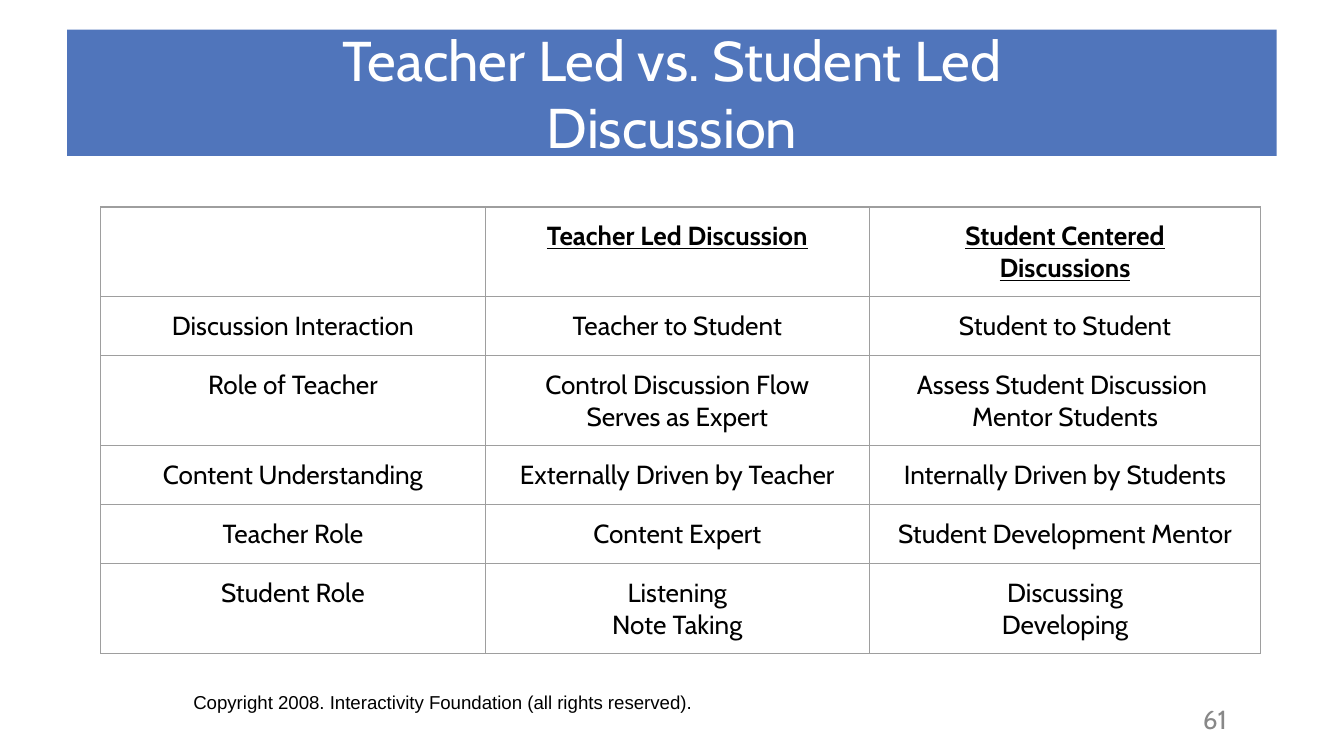
from typing import NamedTuple

from lxml.etree import SubElement
from pptx import Presentation
from pptx.dml.color import RGBColor
from pptx.enum.text import MSO_ANCHOR as Anchor, MSO_AUTO_SIZE as AutoSize, PP_ALIGN as Align
from pptx.oxml.ns import qn
from pptx.util import Inches, Pt

COLORS = {
    "banner": "5075BB",
    "title": "FFFFFF",
    "text": "000000",
    "number": "888888",
    "border": "9E9E9E",
}
SLIDE_WIDTH = Inches(10)
COLUMN_WIDTHS = (2.86, 2.86, 2.91)
ROW_HEIGHT = 0.44  # minimum; two-line rows grow to fit
PADDING = Inches(0.1)


class Comparison(NamedTuple):
    topic: str
    teacher_led: str
    student_centered: str


class Label(NamedTuple):
    text: str
    box: tuple[float, float, float, float]
    font: str
    size: float
    color: str
    align: Align
    anchor: Anchor
    vertical_inset: float


ROWS = [
    Comparison("", "Teacher Led Discussion", "Student Centered\nDiscussions"),
    Comparison("Discussion Interaction", "Teacher to Student", "Student to Student"),
    Comparison("Role of Teacher", "Control Discussion Flow\nServes as Expert",
               "Assess Student Discussion \nMentor Students"),
    Comparison("Content Understanding", "Externally Driven by Teacher",
               "Internally Driven by Students"),
    Comparison("Teacher Role", "Content Expert", "Student Development Mentor"),
    Comparison("Student Role", "Listening\nNote Taking", "Discussing\nDeveloping"),
]
PAGE_NUMBER = Label("61", (8.5, 5.2, 1.08, 0.3), "Cabin", 14, "number",
                    Align.CENTER, Anchor.MIDDLE, 0.05)
COPYRIGHT = Label("Copyright 2008. Interactivity Foundation (all rights reserved).",
                  (1.34, 5.06, 7.94, 0.34), "Arial", 10, "text",
                  Align.LEFT, Anchor.TOP, 0.1)


def format_text(text_frame, font: str, size: float, color: str, align: Align,
                heading: bool = False) -> None:
    for paragraph in text_frame.paragraphs:
        paragraph.alignment = align
        paragraph.font.size = Pt(size)
        for run in paragraph.runs:
            run.font.name = font
            run.font.size = Pt(size)
            run.font.bold = heading
            run.font.underline = heading
            run.font.color.rgb = RGBColor.from_string(COLORS[color])


def add_label(slide, label: Label) -> None:
    shape = slide.shapes.add_textbox(*map(Inches, label.box))
    text_frame = shape.text_frame
    text_frame.word_wrap = True
    text_frame.vertical_anchor = label.anchor
    text_frame.margin_left = text_frame.margin_right = PADDING
    text_frame.margin_top = text_frame.margin_bottom = Inches(label.vertical_inset)
    text_frame.text = label.text
    format_text(text_frame, label.font, label.size, label.color, label.align)


def format_title(title) -> None:
    title.left, title.top, title.width, title.height = map(Inches, (0.5, 0.22, 9, 0.94))
    title.fill.solid()
    title.fill.fore_color.rgb = RGBColor.from_string(COLORS["banner"])
    text_frame = title.text_frame
    text_frame.auto_size = AutoSize.NONE
    text_frame.vertical_anchor = Anchor.MIDDLE
    text_frame.text = "Teacher Led vs. Student Led\nDiscussion"
    format_text(text_frame, "Cabin", 30, "title", Align.CENTER)


def set_borders(cell) -> None:
    properties = cell._tc.get_or_add_tcPr()
    for side in ("a:lnL", "a:lnR", "a:lnT", "a:lnB"):
        line = SubElement(properties, qn(side), w=str(Pt(0.75)))
        fill = SubElement(line, qn("a:solidFill"))
        SubElement(fill, qn("a:srgbClr"), val=COLORS["border"])


def add_comparison_table(slide) -> None:
    shape = slide.shapes.add_table(len(ROWS), len(COLUMN_WIDTHS), Inches(0.75),
                                   Inches(1.54), Inches(8.62), Inches(3.3))
    table = shape.table
    table.first_row = table.horz_banding = False
    for column, width in zip(table.columns, COLUMN_WIDTHS):
        column.width = Inches(width)
    for row_index, (row, comparison) in enumerate(zip(table.rows, ROWS)):
        row.height = Inches(ROW_HEIGHT)
        for cell, text in zip(row.cells, comparison):
            cell.margin_left = cell.margin_right = PADDING
            cell.margin_top = cell.margin_bottom = PADDING
            cell.text = text
            format_text(cell.text_frame, "Cabin", 14, "text", Align.CENTER,
                        heading=row_index == 0)
            set_borders(cell)
            cell.fill.background()
    shape.height = Inches(3.3)


def main() -> None:
    presentation = Presentation()
    presentation.slide_width = SLIDE_WIDTH
    presentation.slide_height = SLIDE_WIDTH * 9 // 16
    slide = presentation.slides.add_slide(presentation.slide_layouts[5])
    add_label(slide, PAGE_NUMBER)
    add_comparison_table(slide)
    format_title(slide.shapes.title)
    add_label(slide, COPYRIGHT)
    presentation.save("out.pptx")


if __name__ == "__main__":
    main()
